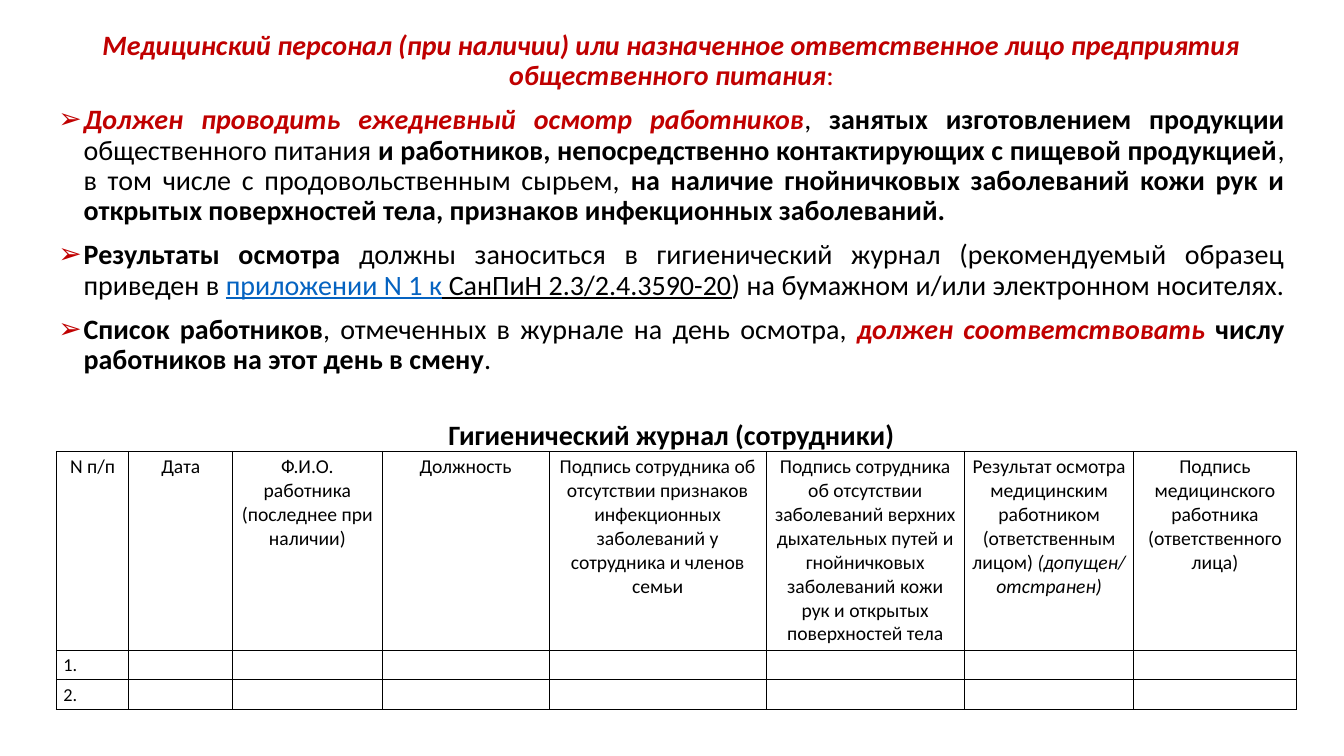
from pptx import Presentation
from pptx import util as u
from pptx.dml import color
from pptx.enum import text
from pptx.oxml import ns
from lxml import etree

FONT = "Calibri"
RED, BLACK, BLUE, WHITE = "C00000", "000000", "0563C1", "FFFFFF"
Pt = u.Pt
ALIGN = text.PP_ALIGN

# Run styles: colour, bold, italic, underline
PLAIN = (BLACK, False, False, False)
BOLD = (BLACK, True, False, False)
ITALIC = (BLACK, False, True, False)
ACCENT = (RED, True, True, False)
RED_PLAIN = (RED, False, False, False)
LINK = (BLUE, False, False, True)
UNDERLINED = (BLACK, False, False, True)

TITLE = [
    ("Медицинский персонал (при наличии) или назначенное ответственное лицо "
     "предприятия общественного питания", ACCENT),
    (":", RED_PLAIN),
]
DUTIES = [
    [("Должен проводить ежедневный осмотр работников", ACCENT),
     (", ", PLAIN),
     ("занятых изготовлением продукции ", BOLD),
     ("общественного питания ", PLAIN),
     ("и работников, непосредственно контактирующих с пищевой продукцией", BOLD),
     (", в том числе с продовольственным сырьем, ", PLAIN),
     ("на наличие гнойничковых заболеваний кожи рук и открытых поверхностей "
      "тела, признаков инфекционных заболеваний. ", BOLD)],
    [("Результаты осмотра ", BOLD),
     ("должны заноситься в гигиенический журнал (рекомендуемый образец "
      "приведен в ", PLAIN),
     ("приложении N 1 к", LINK),
     (" СанПиН 2.3/2.4.3590-20", UNDERLINED),
     (") на бумажном и/или электронном носителях. ", PLAIN)],
    [("Список работников", BOLD),
     (", отмеченных в журнале на день осмотра, ", PLAIN),
     ("должен соответствовать ", ACCENT),
     ("числу работников на этот день в смену", BOLD),
     (".", PLAIN)],
]
CAPTION = [("Гигиенический журнал (сотрудники)", BOLD)]

# Journal columns: width and header runs
COLUMNS = [
    (51.8, [("N п/п", PLAIN)]),
    (74.2, [("Дата", PLAIN)]),
    (106.6, [("Ф.И.О. работника (последнее при наличии)", PLAIN)]),
    (119.5, [("Должность", PLAIN)]),
    (154.8, [("Подпись сотрудника об отсутствии признаков инфекционных "
              "заболеваний у сотрудника и членов семьи", PLAIN)]),
    (141.8, [("Подпись сотрудника об отсутствии заболеваний верхних "
              "дыхательных путей и гнойничковых заболеваний кожи рук и "
              "открытых поверхностей тела", PLAIN)]),
    (121, [("Результат осмотра медицинским работником (ответственным "
            "лицом) ", PLAIN),
           ("(допущен/\nотстранен)", ITALIC)]),
    (115.9, [("Подпись медицинского работника (ответственного лица)", PLAIN)]),
]
ROW_HEIGHTS = [142, 21, 21]


def rgb(value):
    return color.RGBColor.from_string(value)


def add_runs(para, runs, size):
    for words, (ink, bold, italic, underline) in runs:
        for number, line in enumerate(words.split("\n")):
            if number:
                para.add_line_break()
            span = para.add_run()
            span.text = line
            font = span.font
            font.name, font.size = FONT, Pt(size)
            font.bold, font.italic, font.underline = bold, italic, underline
            font.color.rgb = rgb(ink)


def add_bullet(para):
    props = para._p.get_or_add_pPr()
    props.set("marL", str(Pt(18)))
    props.set("indent", str(-Pt(18)))
    bullet_color = etree.SubElement(props, ns.qn("a:buClr"))
    etree.SubElement(bullet_color, ns.qn("a:srgbClr"), val=RED)
    etree.SubElement(props, ns.qn("a:buFont"), typeface="Arial")
    etree.SubElement(props, ns.qn("a:buChar"), char="➢")


def add_body(page):
    box = page.shapes.add_textbox(Pt(34.6), Pt(18.7), Pt(890), Pt(342.7))
    frame = box.text_frame
    frame.word_wrap = True
    # Runs, alignment, space before, bulleted
    blocks = [(TITLE, ALIGN.CENTER, 0, False)]
    blocks += [(duty, ALIGN.JUSTIFY, 10, True) for duty in DUTIES]
    blocks.append((CAPTION, ALIGN.CENTER, 33, False))
    for number, (runs, align, gap, bulleted) in enumerate(blocks):
        para = frame.add_paragraph() if number else frame.paragraphs[0]
        if bulleted:
            add_bullet(para)
        para.alignment = align
        para.line_spacing = 0.9
        para.space_before = Pt(gap)
        add_runs(para, runs, 20)


def style_cell(cell):
    cell.margin_left = cell.margin_right = Pt(5)
    cell.margin_top = cell.margin_bottom = Pt(2.8)
    props = cell._tc.get_or_add_tcPr()
    for side in ("a:lnL", "a:lnR", "a:lnT", "a:lnB"):
        line = etree.SubElement(props, ns.qn(side), w=str(Pt(0.75)))
        fill = etree.SubElement(line, ns.qn("a:solidFill"))
        etree.SubElement(fill, ns.qn("a:srgbClr"), val=BLACK)
    cell.fill.solid()
    cell.fill.fore_color.rgb = rgb(WHITE)


def fill_cell(cell, row, column):
    para = cell.text_frame.paragraphs[0]
    if row == 0:
        para.alignment = ALIGN.CENTER
        add_runs(para, COLUMNS[column][1], 14)
    elif column == 0:
        add_runs(para, [(f"{row}.", PLAIN)], 13)
    else:
        # An empty cell keeps the row low through its end mark size
        etree.SubElement(para._p, ns.qn("a:endParaRPr"), sz="1300")


def add_journal(page):
    width = sum(column[0] for column in COLUMNS)
    frame = page.shapes.add_table(len(ROW_HEIGHTS), len(COLUMNS), Pt(40.3),
                                  Pt(322.4), Pt(width), Pt(sum(ROW_HEIGHTS)))
    table = frame.table
    table.first_row = table.horz_banding = False
    for column, (column_width, _) in enumerate(COLUMNS):
        table.columns[column].width = Pt(column_width)
    for row, height in enumerate(ROW_HEIGHTS):
        table.rows[row].height = Pt(height)
        for column in range(len(COLUMNS)):
            cell = table.cell(row, column)
            style_cell(cell)
            fill_cell(cell, row, column)


def main():
    deck = Presentation()
    deck.slide_width, deck.slide_height = Pt(960), Pt(540)
    page = deck.slides.add_slide(deck.slide_layouts[6])
    add_body(page)
    add_journal(page)
    deck.save("out.pptx")


if __name__ == "__main__":
    main()
